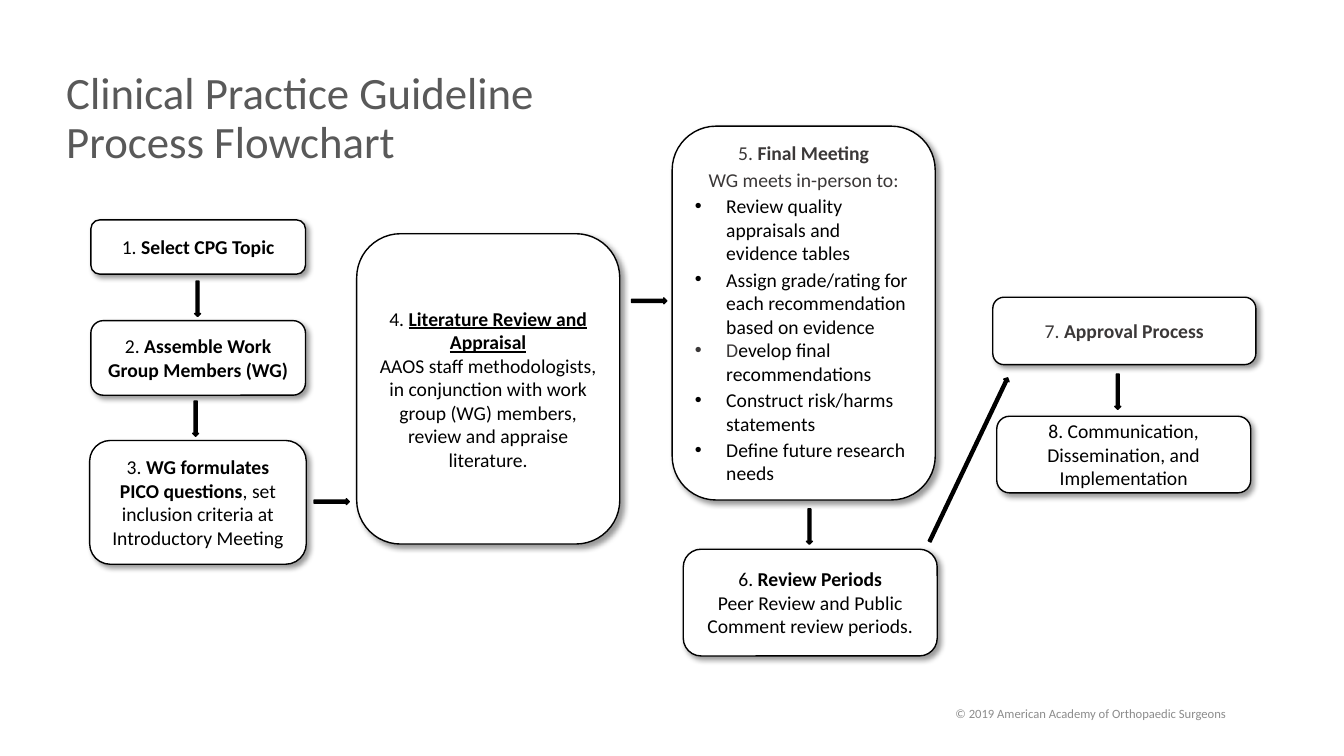
from lxml.etree import SubElement
from pptx import Presentation
from pptx.dml.color import RGBColor
from pptx.enum.shapes import MSO_SHAPE
from pptx.enum.text import MSO_ANCHOR, PP_ALIGN
from pptx.oxml.ns import qn
from pptx.util import Cm, Pt

BLACK = RGBColor(0x00, 0x00, 0x00)
WHITE = RGBColor(0xFF, 0xFF, 0xFF)
CHARCOAL = RGBColor(0x3B, 0x38, 0x38)
TITLE_GREY = RGBColor(0x59, 0x59, 0x59)
FOOTER_GREY = RGBColor(0x8C, 0x8C, 0x8C)
FONT = "Calibri"

TITLE = ["Clinical Practice Guideline", "Process Flowchart"]
COPYRIGHT = "© 2019 American Academy of Orthopaedic Surgeons"

# A run is (text, style, colour); style holds "b" for bold and "u" for underline.
# A paragraph is (kind, points after, runs).
# A step is (left, top, width, height, side inset, paragraphs), in centimetres.
STEPS = [
    (2.29, 5.54, 5.41, 1.37, 0.1, [
        ("center", 0, [("1. ", "", BLACK), ("Select CPG Topic", "b", BLACK)])]),
    (2.29, 8.08, 5.41, 1.88, 0.1, [
        ("center", 0, [("2. ", "", BLACK),
                       ("Assemble Work Group Members (WG)", "b", BLACK)])]),
    (2.26, 11.1, 5.46, 3.12, 0.25, [
        ("center", 0, [("3. ", "", BLACK),
                       ("WG formulates PICO questions", "b", BLACK),
                       (", set inclusion criteria at Introductory Meeting", "", BLACK)])]),
    (8.99, 5.89, 6.63, 7.82, 0.25, [
        ("center", 0, [("4. ", "", BLACK),
                       ("Literature Review and Appraisal", "bu", BLACK)]),
        ("center", 0, [("AAOS staff methodologists, in conjunction with work group (WG) "
                        "members, review and appraise literature.", "", BLACK)])]),
    (17.22, 13.84, 6.4, 2.69, 0.25, [
        ("center", 0, [("6. ", "", BLACK), ("Review Periods", "b", BLACK)]),
        ("center", 0, [("Peer Review and Public Comment review periods.", "", BLACK)])]),
    (16.94, 3.18, 6.63, 9.42, 0.25, [
        ("center", 2, [("5. ", "", CHARCOAL), ("Final Meeting", "b", CHARCOAL)]),
        ("center", 2, [("WG meets in-person to:", "", CHARCOAL)]),
        ("bullet", 2, [("Review quality appraisals and evidence tables", "", BLACK)]),
        ("bullet", 0, [("Assign grade/rating for each recommendation "
                        "based on evidence", "", BLACK)]),
        ("bullet", 2, [("D", "", CHARCOAL), ("evelop final recommendations", "", BLACK)]),
        ("bullet", 2, [("Construct risk/harms statements", "", BLACK)]),
        ("bullet", 2, [("Define future research needs", "", BLACK)])]),
    (25.02, 7.49, 6.63, 1.7, 0.25, [
        ("center", 0, [("7. ", "", CHARCOAL), ("Approval Process", "b", CHARCOAL)])]),
    (25.12, 10.49, 6.4, 1.93, 0.25, [
        ("center", 0, [("8. Communication, Dissemination, and Implementation", "", BLACK)])]),
]

# Arrows: centre x, centre y, length in centimetres; rotation from pointing down
ARROW_WIDTH, SHORT = 0.15, 0.89
DOWN, RIGHT, UP_RIGHT = 0, 270, 205.5
ARROWS = [
    (4.98, 7.53, SHORT, DOWN),
    (4.93, 10.55, SHORT, DOWN),
    (8.36, 12.64, SHORT, RIGHT),
    (16.36, 7.58, SHORT, RIGHT),
    (28.17, 9.87, SHORT, DOWN),
    (20.4, 13.27, SHORT, DOWN),
    (24.41, 11.58, 4.57, UP_RIGHT),
]


def add_run(p, text, size, color, style=""):
    r = p.add_run()
    r.text = text
    r.font.name = FONT
    r.font.size = Pt(size)
    r.font.color.rgb = color
    r.font.bold = "b" in style
    r.font.underline = "u" in style


def paragraphs(tf, items):
    """Pair each item with a paragraph, using the frame's first one first."""
    for i, item in enumerate(items):
        yield (tf.add_paragraph() if i else tf.paragraphs[0]), item


def add_bullet(p):
    pPr = p._p.get_or_add_pPr()
    pPr.set("marL", str(Cm(0.79)))
    pPr.set("indent", str(-Cm(0.79)))
    SubElement(pPr, qn("a:buFont"), typeface="Arial")
    SubElement(pPr, qn("a:buChar"), char="•")


def add_shadow(sp):
    sp.shadow.inherit = False
    effects = sp._element.spPr.find(qn("a:effectLst"))
    shadow = SubElement(effects, qn("a:outerShdw"), blurRad=str(Pt(4)),
                        dist=str(Pt(3)), dir=str(45 * 60000), algn="tl",
                        rotWithShape="0")
    color = SubElement(shadow, qn("a:srgbClr"), val=str(BLACK))
    SubElement(color, qn("a:alpha"), val="40000")


def add_filled(s, kind, fill, left, top, width, height):
    sp = s.shapes.add_shape(kind, Cm(left), Cm(top), Cm(width), Cm(height))
    sp.shadow.inherit = False
    sp.fill.solid()
    sp.fill.fore_color.rgb = fill
    sp.line.color.rgb = BLACK
    sp.line.width = Pt(1)
    return sp


def add_step(s, left, top, width, height, inset, content):
    sp = add_filled(s, MSO_SHAPE.ROUNDED_RECTANGLE, WHITE, left, top, width, height)
    add_shadow(sp)
    tf = sp.text_frame
    tf.word_wrap = True
    tf.vertical_anchor = MSO_ANCHOR.MIDDLE
    tf.margin_left = tf.margin_right = Cm(inset)
    tf.margin_top = tf.margin_bottom = Cm(0.1)
    for p, (kind, after, runs) in paragraphs(tf, content):
        p.alignment = PP_ALIGN.CENTER if kind == "center" else PP_ALIGN.LEFT
        p.space_after = Pt(after)
        if kind == "bullet":
            add_bullet(p)
        for text, style, color in runs:
            add_run(p, text, 14, color, style)


def add_arrow(s, x, y, length, rotation):
    sp = add_filled(s, MSO_SHAPE.DOWN_ARROW, BLACK, x - ARROW_WIDTH / 2,
                    y - length / 2, ARROW_WIDTH, length)
    sp.rotation = rotation


def add_label(s, left, top, width, height, lines, size, color, align, spacing):
    tf = s.shapes.add_textbox(Cm(left), Cm(top), Cm(width), Cm(height)).text_frame
    tf.word_wrap = True
    tf.vertical_anchor = MSO_ANCHOR.MIDDLE
    for p, line in paragraphs(tf, lines):
        p.alignment = align
        p.line_spacing = spacing
        add_run(p, line, size, color)


def main():
    prs = Presentation()
    prs.slide_width, prs.slide_height = Cm(33.87), Cm(19.05)
    s = prs.slides.add_slide(prs.slide_layouts[6])
    add_label(s, 21.77, 17.48, 11.43, 1.02, [COPYRIGHT], 9, FOOTER_GREY,
              PP_ALIGN.CENTER, 1.0)
    add_label(s, 1.42, 2.06, 30.91, 1.9, TITLE, 32, TITLE_GREY, PP_ALIGN.LEFT, 0.9)
    for step in STEPS:
        add_step(s, *step)
    for arrow in ARROWS:
        add_arrow(s, *arrow)
    prs.save("out.pptx")


if __name__ == "__main__":
    main()
